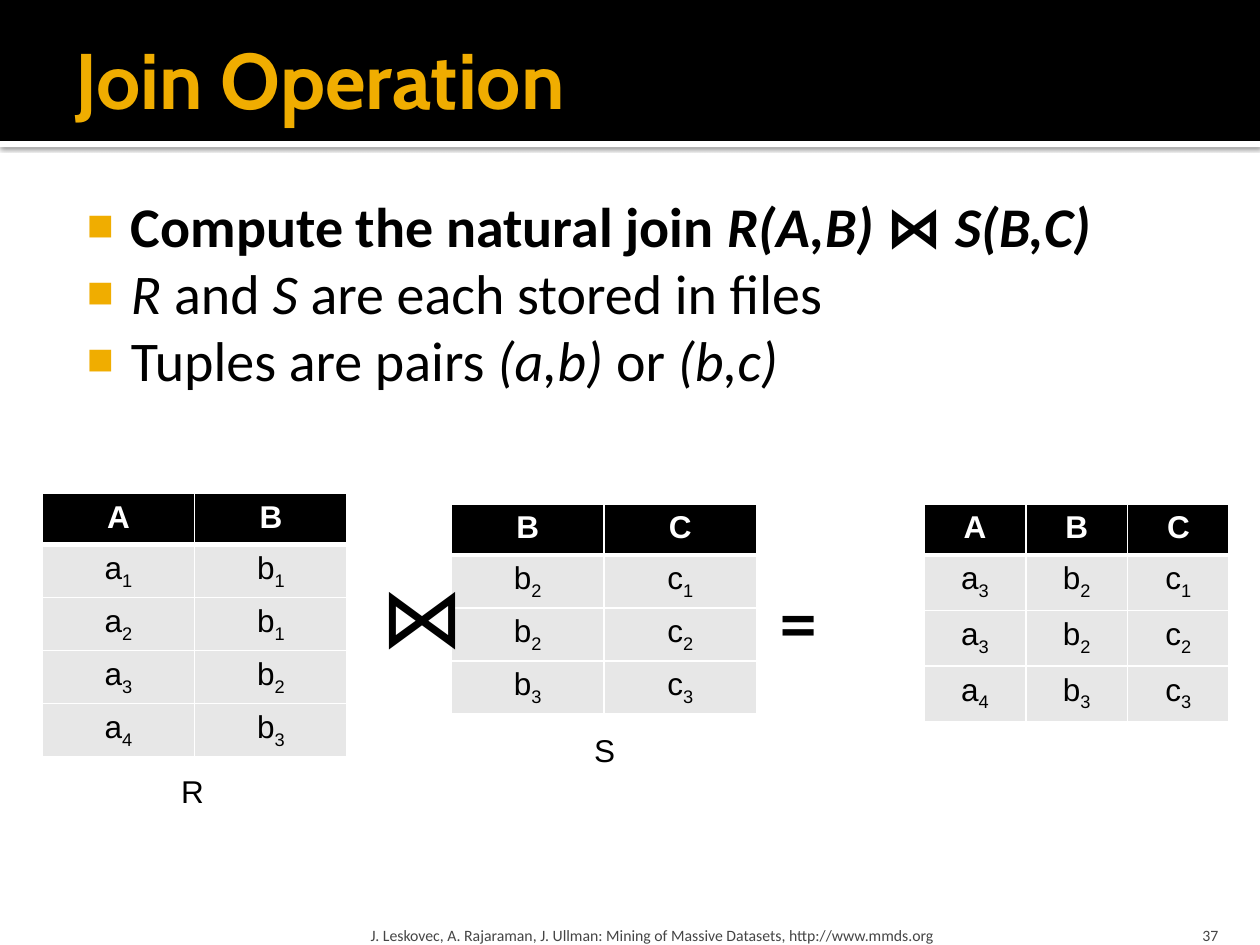
from dataclasses import dataclass

from lxml import etree
from pptx import Presentation
from pptx.dml.color import RGBColor
from pptx.enum.shapes import MSO_SHAPE
from pptx.enum.text import MSO_ANCHOR, MSO_AUTO_SIZE, PP_ALIGN
from pptx.oxml.ns import qn
from pptx.util import Cm, Pt

RECT = MSO_SHAPE.RECTANGLE
TOP, MIDDLE, BOTTOM = MSO_ANCHOR.TOP, MSO_ANCHOR.MIDDLE, MSO_ANCHOR.BOTTOM
LEFT, CENTER, RIGHT = PP_ALIGN.LEFT, PP_ALIGN.CENTER, PP_ALIGN.RIGHT
NO_FIT = MSO_AUTO_SIZE.NONE


@dataclass(frozen=True)
class Theme:
    black: str = "000000"
    white: str = "FFFFFF"
    gold: str = "F0AD00"
    gray: str = "454545"
    cell: str = "E7E7E7"
    head: str = "Cabin"
    body: str = "Calibri"
    data: str = "Arial"
    title: int = 45
    list: int = 32
    sign: int = 48
    table: int = 18
    foot: int = 9


class Board:
    def __init__(self, slide, theme):
        self.slide, self.theme = slide, theme

    def run(self, para, text, font, size, color, bold=False, italic=False):
        run = para.add_run()
        run.text = text
        face = run.font
        face.name, face.size = font, Pt(size)
        face.bold, face.italic = bold, italic
        face.color.rgb = RGBColor.from_string(color)
        return run

    def place(self, shape, box):
        shape.left, shape.top, shape.width, shape.height = map(Cm, box)

    def frame(self, shape, pads, anchor=TOP, wrap=True):
        frame = shape.text_frame
        frame.auto_size, frame.word_wrap = NO_FIT, wrap
        frame.vertical_anchor = anchor
        (frame.margin_left, frame.margin_top,
         frame.margin_right, frame.margin_bottom) = map(Cm, pads)
        return frame

    def bar(self, box, color, shadow=False):
        """Add a band behind everything else."""
        bar = self.slide.shapes.add_shape(RECT, *map(Cm, box))
        bar.shadow.inherit = False
        bar.fill.solid()
        bar.fill.fore_color.rgb = RGBColor.from_string(color)
        bar.line.fill.background()
        if shadow:
            effect = bar._element.spPr.find(qn("a:effectLst"))
            cast = etree.SubElement(
                effect, qn("a:outerShdw"), blurRad=str(Pt(2.5)),
                dist=str(Pt(0.8)), dir="5400000", algn="tl", rotWithShape="0")
            tint = etree.SubElement(cast, qn("a:srgbClr"), val=self.theme.black)
            etree.SubElement(tint, qn("a:alpha"), val="60000")
        self.slide.shapes._spTree.insert(2, bar._element)

    def title(self, box, text):
        t = self.theme
        shape = self.slide.shapes.title
        self.place(shape, box)
        para = self.frame(shape, (0.25, 0.13, 0.13, 0.13), MIDDLE).paragraphs[0]
        para.alignment = LEFT
        self.run(para, text, t.head, t.title, t.gold, bold=True)

    def bullets(self, box, items):
        """Each item is (bold, runs); every second run is italic."""
        t = self.theme
        shape = self.slide.placeholders[1]
        self.place(shape, box)
        frame = self.frame(shape, (0.15, 0.25, 0.25, 0.13))
        for row, (bold, runs) in enumerate(items):
            para = frame.add_paragraph() if row else frame.paragraphs[0]
            para.space_before = Pt(0)
            props = para._p.get_or_add_pPr()
            props.set("marL", str(Cm(1.22)))
            props.set("indent", str(Cm(-0.89)))
            color = etree.SubElement(props, qn("a:buClr"))
            etree.SubElement(color, qn("a:srgbClr"), val=t.gold)
            etree.SubElement(props, qn("a:buSzPct"), val="80000")
            etree.SubElement(props, qn("a:buChar"), char="■")
            for spot, text in enumerate(runs):
                if text:
                    self.run(para, text, t.body, t.list, t.black, bold, spot % 2 == 1)

    def text(self, box, text, font, size, color, align=LEFT, anchor=TOP,
             pads=(0.25, 0.13, 0.25, 0.13), wrap=False):
        shape = self.slide.shapes.add_textbox(*map(Cm, box))
        para = self.frame(shape, pads, anchor, wrap).paragraphs[0]
        para.alignment = align
        self.run(para, text, font, size, color)

    def cell(self, cell, text, row):
        t = self.theme
        props = cell._tc.get_or_add_tcPr()
        wide = {"lnT": row == 1, "lnB": row == 0}
        for side in ("lnL", "lnR", "lnT", "lnB"):
            width = Pt(3 if wide.get(side) else 1)
            line = etree.SubElement(props, qn("a:" + side), w=str(width))
            fill = etree.SubElement(line, qn("a:solidFill"))
            etree.SubElement(fill, qn("a:srgbClr"), val=t.white)
        cell.fill.solid()
        cell.fill.fore_color.rgb = RGBColor.from_string(t.cell if row else t.black)
        para = cell.text_frame.paragraphs[0]
        para.alignment = CENTER
        ink = t.black if row else t.white
        self.run(para, text[0], t.data, t.table, ink, bold=row == 0)
        if text[1:]:
            low = self.run(para, text[1:], t.data, t.table, ink)
            low.font._element.set("baseline", "-25000")

    def table(self, left, top, rows, pitch=1.03):
        """Lay out rows of space-separated cells, header first."""
        grid = [row.split() for row in rows]
        count, wide = len(grid), len(grid[0])
        width = 6.15
        table = self.slide.shapes.add_table(
            count, wide, Cm(left), Cm(top), Cm(width), Cm(pitch * count)).table
        table.horz_banding = False
        for col in table.columns:
            col.width = Cm(width / wide)
        for row, texts in enumerate(grid):
            table.rows[row].height = Cm(pitch if row else 1.03)
            for col, text in enumerate(texts):
                self.cell(table.cell(row, col), text, row)


def main():
    deck = Presentation()
    deck.slide_width, deck.slide_height = Cm(25.4), Cm(19.05)
    t = Theme()
    board = Board(deck.slides.add_slide(deck.slide_layouts[1]), t)

    # Header band with a white rule under it
    board.bar((0, 0, 25.4, 2.84), t.black)
    board.bar((0, 2.84, 25.4, 0.13), t.white, shadow=True)
    board.title((1.27, 0.2, 22.86, 2.74), "Join Operation")

    # Main points
    board.bullets((1.27, 3.61, 22.86, 5.92), [
        (True, ["Compute the natural join ", "R(A,B) ", "⋈", " S(B,C)"]),
        (False, ["", "R", " and ", "S", " are each stored in files"]),
        (False, ["Tuples are pairs ", "(a,b)", " or ", "(b,c)"]),
    ])

    # Footer and page number
    foot = (t.body, t.foot, t.gray)
    board.text((7.34, 18.29, 15.29, 0.76),
               "J. Leskovec, A. Rajaraman, J. Ullman: Mining of Massive Datasets, "
               "http://www.mmds.org",
               *foot, anchor=BOTTOM, pads=(0.13, 0.13, 0.13, 0), wrap=True)
    board.text((22.78, 18.29, 2.03, 0.76), "37", *foot, align=RIGHT,
               anchor=BOTTOM, pads=(0.25, 0.13, 0.25, 0), wrap=True)

    # Relations R and S, then their join
    board.table(0.85, 9.95, ["A B", "a1 b1", "a2 b1", "a3 b2", "a4 b3"])
    board.table(9.1, 10.16, ["B C", "b2 c1", "b2 c2", "b3 c3"])
    board.table(18.63, 10.16, ["A B C", "a3 b2 c1", "a3 b2 c2", "a4 b3 c3"],
                pitch=1.12)

    # Signs and names
    sign = (t.head, t.sign, t.black)
    name = (t.data, t.table, t.black)
    board.text((7.42, 11.23, 1.93, 2.31), "⋈", *sign)
    board.text((15.42, 11.28, 1.4, 2.31), "=", *sign)
    board.text((3.4, 15.44, 0.97, 1.02), "R", *name)
    board.text((11.73, 14.6, 0.97, 1.02), "S", *name)

    deck.save("out.pptx")


if __name__ == "__main__":
    main()
